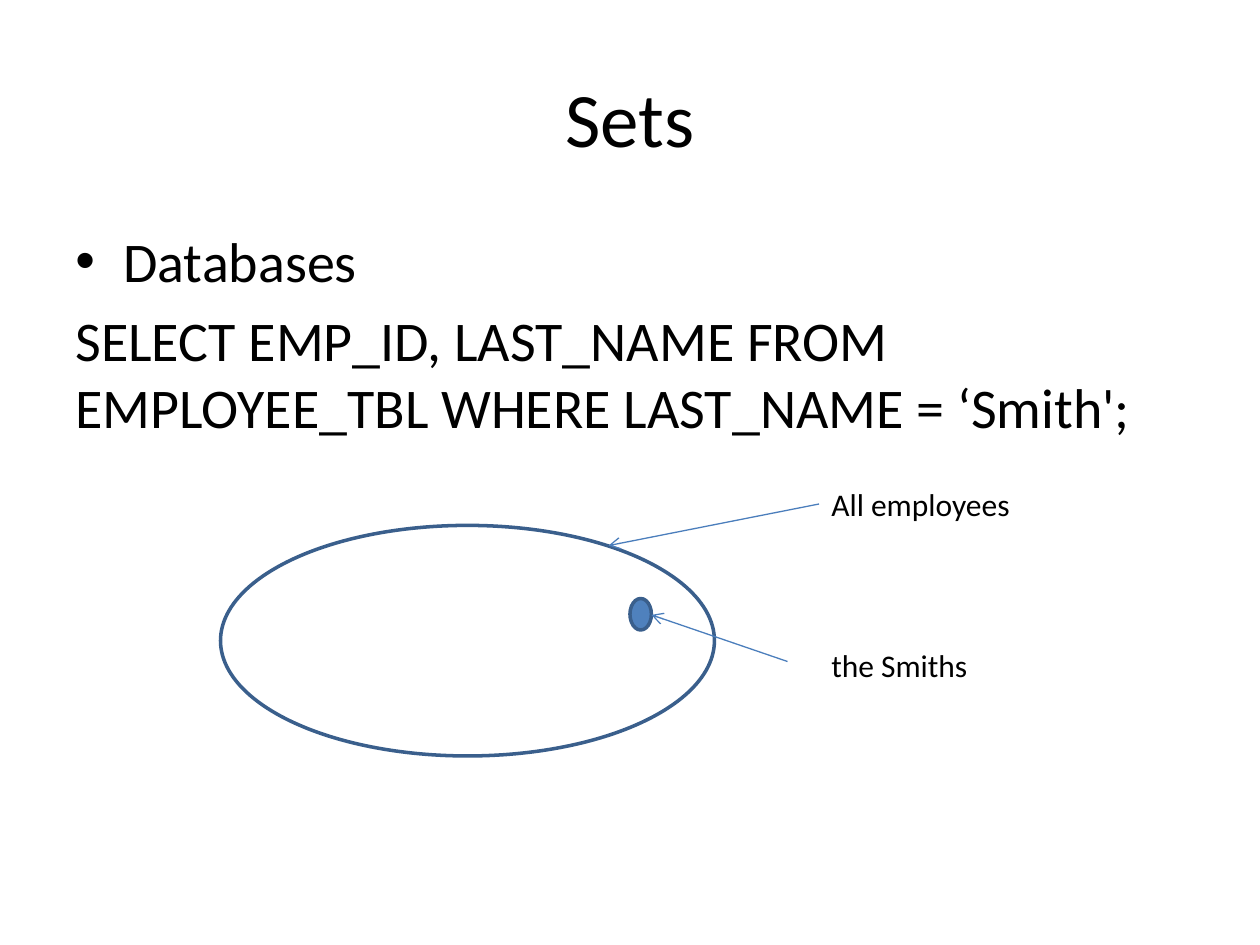
import pptx
import pptx.util
import pptx.dml.color
import pptx.enum.shapes
import pptx.enum.text
import pptx.oxml.ns
from lxml import etree

Inches = pptx.util.Inches
Pt = pptx.util.Pt
RGBColor = pptx.dml.color.RGBColor
ALIGN = pptx.enum.text.PP_ALIGN
ANCHOR = pptx.enum.text.MSO_ANCHOR
qn = pptx.oxml.ns.qn

BLACK = RGBColor(0x00, 0x00, 0x00)
BLUE = RGBColor(0x4F, 0x81, 0xBD)
OUTLINE = RGBColor(0x3A, 0x5F, 0x8C)
ARROW = RGBColor(0x4B, 0x7E, 0xBC)
FONT = "Calibri"

# Content: boxes are left, top, width, height in inches
TITLE = "Sets"
TOPIC = "Databases"
QUERY = "SELECT EMP_ID, LAST_NAME FROM EMPLOYEE_TBL WHERE LAST_NAME = ‘Smith';"
SETS = [
    ((1.75, 4.17, 3.92, 1.83), None),
    ((5, 4.75, 0.17, 0.25), BLUE),
]
LABELS = [
    ("All employees", (6.5, 3.8, 1.83, 0.4)),
    ("the Smiths", (6.5, 5.08, 1.83, 0.4)),
]
POINTERS = [
    ((6.5, 4), (4.83, 4.33)),
    ((6.25, 5.25), (5.17, 4.88)),
]


def add_text(page, texts, place, size=18, align=ALIGN.LEFT,
             anchor=ANCHOR.TOP, before=0, bulleted=()):
    """Add a text box with one paragraph per text; bulleted lists indexes."""
    box = page.shapes.add_textbox(*map(Inches, place))
    frame = box.text_frame
    frame.word_wrap = True
    frame.vertical_anchor = anchor
    for index, text in enumerate(texts):
        para = frame.paragraphs[0] if index == 0 else frame.add_paragraph()
        para.alignment = align
        para.space_before = Pt(before)
        span = para.add_run()
        span.text = text
        span.font.name = FONT
        span.font.size = Pt(size)
        span.font.color.rgb = BLACK
        if index in bulleted:
            properties = para._p.get_or_add_pPr()
            properties.set("marL", str(Inches(0.38)))
            properties.set("indent", str(-Inches(0.38)))
            etree.SubElement(properties, qn("a:buFont"), typeface="Arial")
            etree.SubElement(properties, qn("a:buChar"), char="•")
    return box


def add_set(page, place, fill):
    oval = page.shapes.add_shape(
        pptx.enum.shapes.MSO_SHAPE.OVAL, *map(Inches, place))
    oval.shadow.inherit = False
    if fill is None:
        oval.fill.background()
    else:
        oval.fill.solid()
        oval.fill.fore_color.rgb = fill
    oval.line.color.rgb = OUTLINE
    oval.line.width = Pt(2)


def add_pointer(page, start, end):
    pointer = page.shapes.add_connector(
        pptx.enum.shapes.MSO_CONNECTOR.STRAIGHT, *map(Inches, start + end))
    pointer.line.color.rgb = ARROW
    pointer.line.width = Pt(0.75)
    etree.SubElement(pointer.line._get_or_add_ln(), qn("a:tailEnd"), type="arrow")
    etree.SubElement(pointer._element.spPr, qn("a:effectLst"))


def main():
    deck = pptx.Presentation()
    deck.slide_width, deck.slide_height = Inches(10), Inches(7.5)
    page = deck.slides.add_slide(deck.slide_layouts[6])

    # Title and query
    add_text(page, [TITLE], (0.5, 0.3, 9, 1.25), size=44,
             align=ALIGN.CENTER, anchor=ANCHOR.MIDDLE)
    add_text(page, [TOPIC, QUERY], (0.5, 1.75, 9, 4.95), size=32,
             before=6.4, bulleted=[0])

    # Set diagram with its labels
    for place, fill in SETS:
        add_set(page, place, fill)
    for start, end in POINTERS:
        add_pointer(page, start, end)
    for text, place in LABELS:
        add_text(page, [text], place)

    deck.save("out.pptx")


if __name__ == "__main__":
    main()
